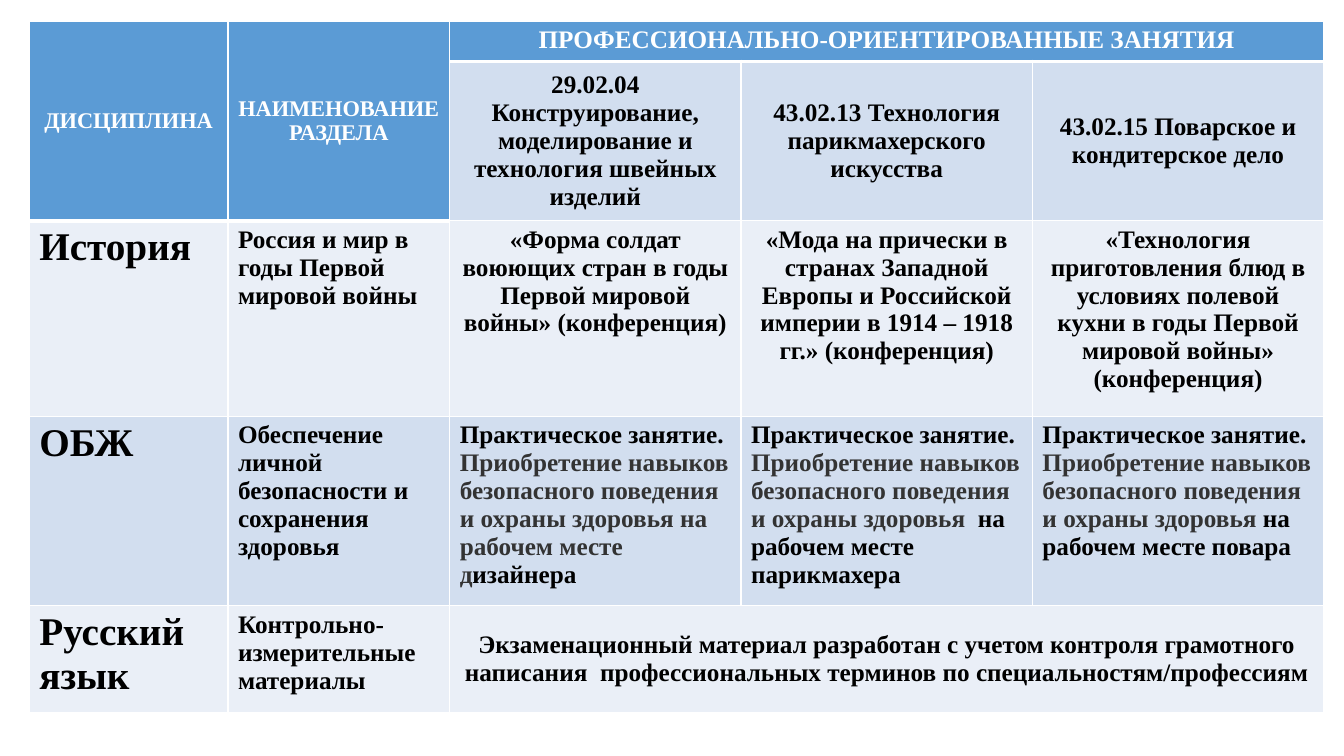
import pptx
import pptx.util
import pptx.dml.color
import pptx.enum.text
import pptx.oxml.ns
import lxml.etree

FONT = "Times New Roman"
HUES = {"head": "5B9BD5", "dark": "D2DEEF", "pale": "EAEFF7",
        "white": "FFFFFF", "black": "000000", "grey": "333333"}
WIDE, HIGH = 13.33, 7.5
LEFT, TOP = 2.18, 2.8
# Shares of the slide in percent
COLS = [14.78, 16.5] + [21.68] * 3
ROWS = [5.33, 21.07, 25.87, 25.07, 14.13]

LESSON = "Практическое занятие."
SKILL = "Приобретение навыков безопасного поведения и охраны здоровья"

HEADS = [
    (0, 0, 1, 0, 16, "ДИСЦИПЛИНА"),
    (0, 1, 1, 1, 16, "НАИМЕНОВАНИЕ РАЗДЕЛА"),
    (0, 2, 0, 4, 18, "ПРОФЕССИОНАЛЬНО-ОРИЕНТИРОВАННЫЕ ЗАНЯТИЯ"),
]
TRADES = [
    "29.02.04 Конструирование, моделирование и технология швейных изделий",
    "43.02.13 Технология парикмахерского искусства",
    "43.02.15 Поварское и кондитерское дело",
]
TOPICS = [
    ("История", "Россия и мир в годы Первой мировой войны"),
    ("ОБЖ", "Обеспечение личной безопасности и сохранения здоровья"),
    ("Русский язык", "Контрольно-измерительные материалы"),
]
TALKS = [
    ["«Форма солдат воюющих стран в годы Первой мировой войны» (конференция)"],
    ["«Мода на прически в странах Западной Европы и Российской империи "
     "в 1914 – 1918 гг.» (конференция)"],
    ["«Технология приготовления блюд в условиях полевой кухни "
     "в годы Первой мировой войны»", "(конференция)"],
]
DRILLS = [
    [LESSON, [(SKILL + " на рабочем месте д", "grey"), ("изайнера", "black")]],
    [[(LESSON, "black"), (" " + SKILL, "grey"),
      ("  на рабочем месте парикмахера", "black")]],
    [[(LESSON + " ", "black"), (SKILL + " ", "grey"),
      ("на рабочем месте повара", "black")]],
]
EXAM = ("Экзаменационный материал разработан с учетом контроля грамотного "
        "написания  профессиональных терминов по специальностям/профессиям")


def across(share):
    return pptx.util.Inches(WIDE * share / 100)


def down(share):
    return pptx.util.Inches(HIGH * share / 100)


def paint(fill, hue):
    fill.solid()
    fill.fore_color.rgb = pptx.dml.color.RGBColor.from_string(HUES[hue])


class Deck:
    def __init__(self):
        self.show = pptx.Presentation()
        self.show.slide_width = pptx.util.Inches(WIDE)
        self.show.slide_height = pptx.util.Inches(HIGH)
        self.slide = self.show.slides.add_slide(self.show.slide_layouts[6])

    def grid(self, left, top, cols, rows):
        frame = self.slide.shapes.add_table(
            len(rows), len(cols), across(left), down(top),
            across(sum(cols)), down(sum(rows)))
        self.table = frame.table
        self.table.horz_banding = False
        for col, share in zip(self.table.columns, cols):
            col.width = across(share)
        for row, share in zip(self.table.rows, rows):
            row.height = down(share)

    def edge(self, cell, base):
        """Draw white borders, the bottom one with its own width in points."""
        props = cell._tc.get_or_add_tcPr()
        qn = pptx.oxml.ns.qn
        for spot, (side, width) in enumerate(
                [("L", 1), ("R", 1), ("T", 1), ("B", base)]):
            line = lxml.etree.Element(qn("a:ln" + side),
                                      w=str(pptx.util.Pt(width)))
            fill = lxml.etree.SubElement(line, qn("a:solidFill"))
            lxml.etree.SubElement(fill, qn("a:srgbClr"), val=HUES["white"])
            props.insert(spot, line)

    def style(self, row, col, hue, base=1):
        cell = self.table.cell(row, col)
        paint(cell.fill, hue)
        self.edge(cell, base)

    def label(self, row, col, paras, size=18, ink="black",
              center=False, middle=False):
        """Fill a cell; a paragraph is a string or a list of (text, hue)."""
        cell = self.table.cell(row, col)
        if middle:
            cell.vertical_anchor = pptx.enum.text.MSO_ANCHOR.MIDDLE
        frame = cell.text_frame
        align = pptx.enum.text.PP_ALIGN
        for spot, parts in enumerate(paras):
            para = frame.add_paragraph() if spot else frame.paragraphs[0]
            para.alignment = align.CENTER if center else align.LEFT
            if isinstance(parts, str):
                parts = [(parts, ink)]
            for text, hue in parts:
                run = para.add_run()
                run.text = text
                run.font.name = FONT
                run.font.size = pptx.util.Pt(size)
                run.font.bold = True
                paint(run.font.fill, hue)

    def merge(self, row, col, last, end):
        self.table.cell(row, col).merge(self.table.cell(last, end))


def main():
    deck = Deck()
    deck.grid(LEFT, TOP, COLS, ROWS)
    for row in range(len(ROWS)):
        for col in range(len(COLS)):
            if row == 0 or row == 1 and col < 2:
                deck.style(row, col, "head", 3)
            else:
                deck.style(row, col, "dark" if row % 2 else "pale")

    for row, col, last, end, size, text in HEADS:
        deck.merge(row, col, last, end)
        deck.label(row, col, [text], size, "white", True, last > row)
    for row, (name, theme) in enumerate(TOPICS, 2):
        deck.label(row, 0, [name], 28)
        deck.label(row, 1, [theme])
    for col, (trade, talk, drill) in enumerate(zip(TRADES, TALKS, DRILLS), 2):
        deck.label(1, col, [trade], center=True, middle=True)
        deck.label(2, col, talk, center=True)
        deck.label(3, col, drill)
    deck.merge(4, 2, 4, 4)
    deck.label(4, 2, [EXAM], center=True, middle=True)
    deck.show.save("out.pptx")


if __name__ == "__main__":
    main()
